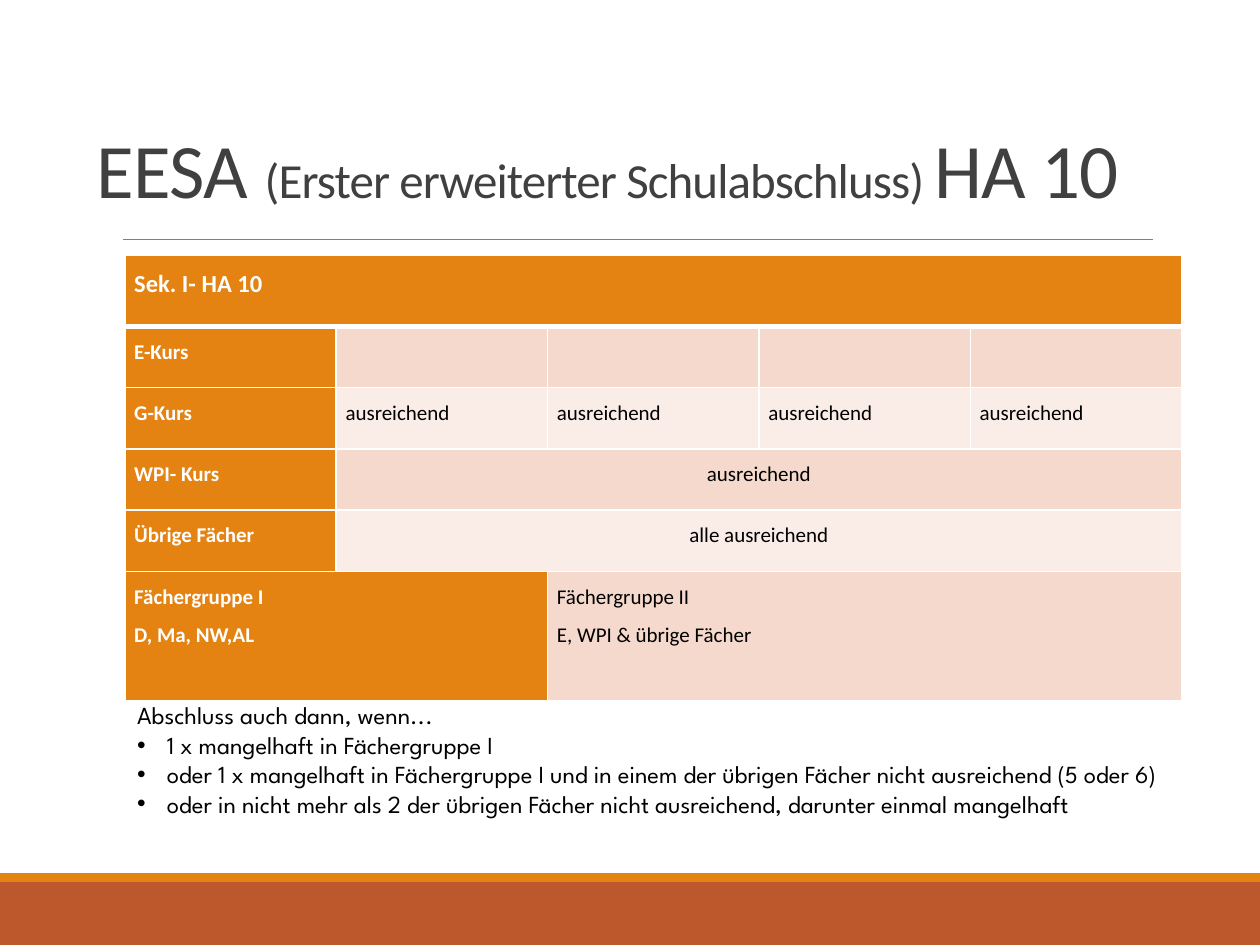
"""Build the slide on the EESA school certificate, class HA 10."""
from lxml import etree
from pptx import Presentation
from pptx.dml.color import RGBColor
from pptx.enum import shapes, text
from pptx.oxml import parse_xml
from pptx.oxml.ns import nsdecls, qn
from pptx.util import Pt

RUST = RGBColor(0xBD, 0x58, 0x2C)
ORANGE = RGBColor(0xE4, 0x83, 0x12)
ROSE = RGBColor(0xF5, 0xD9, 0xCC)
PALE = RGBColor(0xFA, 0xED, 0xE7)
GREY = RGBColor(0x80, 0x80, 0x80)
DARK = RGBColor(0x40, 0x40, 0x40)
BLACK = RGBColor(0, 0, 0)
WHITE = RGBColor(255, 255, 255)


def style(font, name, size, color, bold=False):
    font.name, font.size, font.bold = name, Pt(size), bold
    font.color.rgb = color


def edge(cell, side, width):
    cell._tc.get_or_add_tcPr().append(parse_xml(
        f'<a:ln{side} {nsdecls("a")} w="{Pt(width)}"><a:solidFill>'
        f'<a:srgbClr val="{WHITE}"/></a:solidFill></a:ln{side}>'))


deck = Presentation()
deck.slide_width, deck.slide_height = Pt(720), Pt(540)
slide = deck.slides.add_slide(deck.slide_layouts[5])

for top, high, color in [(504, 36, RUST), (499, 5, ORANGE)]:
    band = slide.shapes.add_shape(
        shapes.MSO_SHAPE.RECTANGLE, Pt(0), Pt(top), Pt(720), Pt(high))
    band.shadow.inherit = False
    band.fill.solid()
    band.fill.fore_color.rgb = color
    band.line.fill.background()

rule = slide.shapes.add_connector(
    shapes.MSO_CONNECTOR.STRAIGHT, Pt(70.5), Pt(136.8), Pt(659), Pt(136.8))
rule.line.color.rgb = GREY
rule.line.width = Pt(0.5)
etree.SubElement(rule._element.spPr, qn("a:effectLst"))

title = slide.shapes.title
title.left, title.top, title.width, title.height = Pt(48.2), Pt(27.4), Pt(629.3), Pt(98.6)
frame = title.text_frame
frame.auto_size = text.MSO_AUTO_SIZE.NONE
frame.vertical_anchor = text.MSO_ANCHOR.BOTTOM
para = frame.paragraphs[0]
para.alignment = text.PP_ALIGN.LEFT
para.line_spacing = 0.85
for words, size in [("EESA ", 44), ("(Erster erweiterter Schulabschluss) ", 28), ("HA 10", 44)]:
    run = para.add_run()
    run.text = words
    style(run.font, "Calibri", size, DARK)
    run._r.get_or_add_rPr().set("spc", "-50")

rows = [
    (41, [("Sek. I- HA 10", 5)]),
    (35, [("E-Kurs", 1)] + [("", 1)] * 4),
    (35, [("G-Kurs", 1)] + [("ausreichend", 1)] * 4),
    (35, [("WPI- Kurs", 1), ("ausreichend", 4)]),
    (35, [("Übrige Fächer", 1), ("alle ausreichend", 4)]),
    (74, [("Fächergruppe I\nD, Ma, NW,AL", 2), ("Fächergruppe II\nE, WPI & übrige Fächer", 3)]),
]
table = slide.shapes.add_table(
    len(rows), 5, Pt(71.3), Pt(145.6), Pt(604), Pt(255)).table
for col in table.columns:
    col.width = Pt(120.8)
for i, (high, cells) in enumerate(rows):
    table.rows[i].height = Pt(high)
    start = 0
    for words, span in cells:
        head = start == 0
        cell = table.cell(i, start)
        if span > 1:
            cell.merge(table.cell(i, start + span - 1))
        cell.text = words
        for para in cell.text_frame.paragraphs:
            para.line_spacing = 1.5
            style(para.font, "Calibri", 12 if i else 14, WHITE if head else BLACK, head)
            if span == 4:
                para.alignment = text.PP_ALIGN.CENTER
        for j in range(start, start + span):
            part = table.cell(i, j)
            part.margin_left = part.margin_right = Pt(5.4)
            part.margin_top = part.margin_bottom = Pt(0)
            for side in "LRTB":
                thick = (i, side) in [(0, "B"), (1, "T")]
                edge(part, side, 3 if thick else 1)
            part.fill.solid()
            part.fill.fore_color.rgb = ORANGE if head else ROSE if i % 2 else PALE
        start += span

notes = [
    "Abschluss auch dann, wenn...",
    "1 x mangelhaft in Fächergruppe I",
    "oder 1 x mangelhaft in Fächergruppe I und in einem der übrigen Fächer nicht ausreichend (5 oder 6)",
    "oder in nicht mehr als 2 der übrigen Fächer nicht ausreichend, darunter einmal mangelhaft",
]
box = slide.shapes.add_textbox(Pt(71.3), Pt(396.7), Pt(606.2), Pt(108.7))
frame = box.text_frame
frame.word_wrap = True
frame.text = "\n".join(notes)
for i, para in enumerate(frame.paragraphs):
    style(para.font, "League Spartan", 14, BLACK)
    if i:
        props = para._p.get_or_add_pPr()
        props.set("marL", str(Pt(17)))
        props.set("indent", str(Pt(-17)))
        props.insert(0, parse_xml(f'<a:buChar {nsdecls("a")} char="•"/>'))
        props.insert(0, parse_xml(f'<a:buFont {nsdecls("a")} typeface="Arial"/>'))

deck.save("out.pptx")
